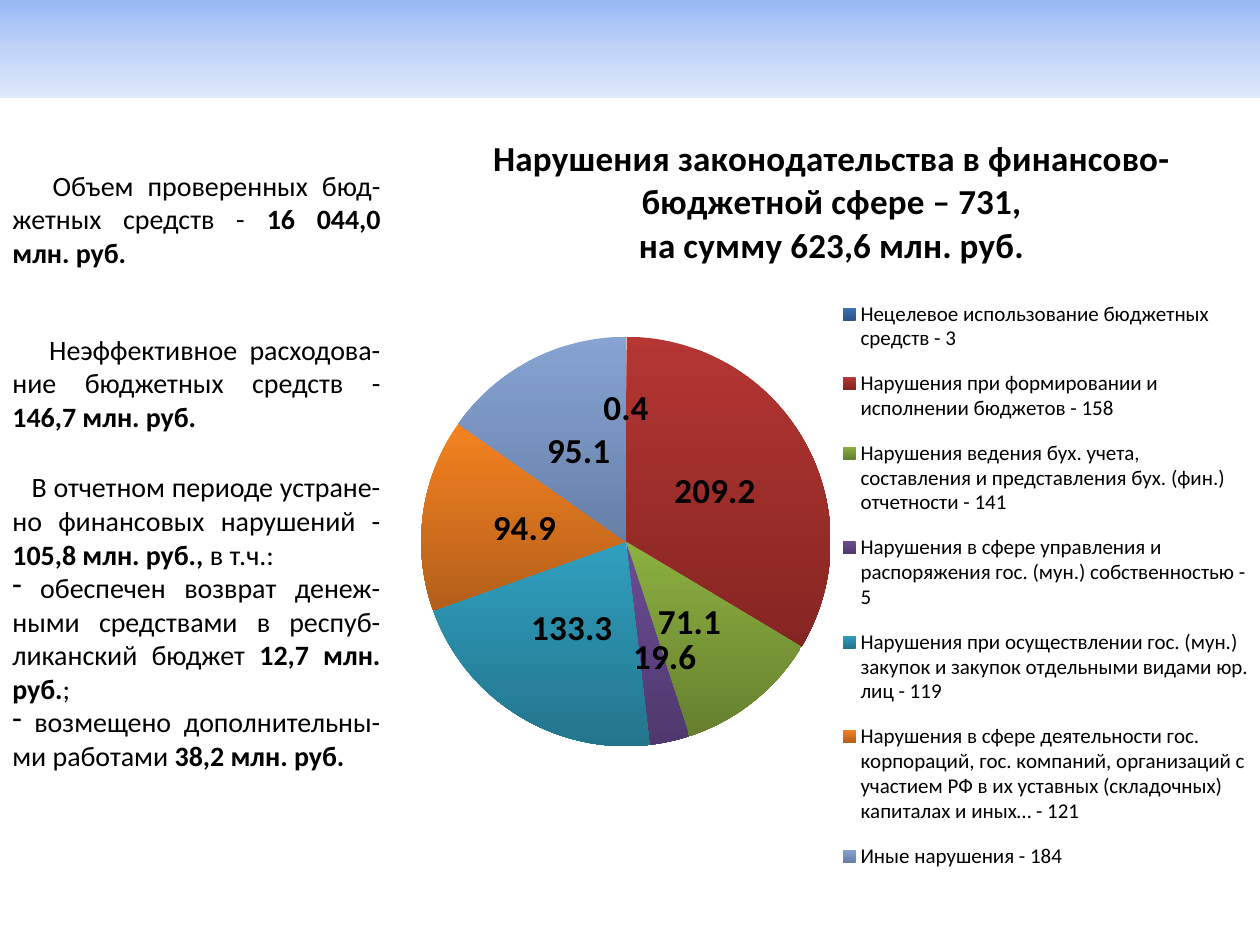
import copy

import lxml.etree
import pptx
import pptx.chart.data
import pptx.dml.color
import pptx.enum.chart
import pptx.enum.shapes
import pptx.enum.text
import pptx.oxml
import pptx.oxml.ns
import pptx.util

Pt = pptx.util.Pt
qn = pptx.oxml.ns.qn


def rgb(value):
    return pptx.dml.color.RGBColor.from_string(value)


def shade(fill, top, bottom):
    fill.gradient()
    fill.gradient_angle = 270
    for stop, color, position in zip(fill.gradient_stops, (top, bottom), (0, 1)):
        stop.color.rgb = rgb(color)
        stop.position = position


prs = pptx.Presentation()
prs.slide_width, prs.slide_height = Pt(720), Pt(540)
s = prs.slides.add_slide(prs.slide_layouts[6])

categories = [
    ("Нецелевое использование бюджетных средств - 3", 0.4, "3A73B8", "2A548A"),
    ("Нарушения при формировании и исполнении бюджетов - 158", 209.2, "B53633", "852522"),
    ("Нарушения ведения бух. учета, составления и представления бух. (фин.) отчетности - 141",
     71.1, "8CB040", "66802F"),
    ("Нарушения в сфере управления и распоряжения гос. (мун.) собственностью - 5",
     19.6, "6B4C94", "50386E"),
    ("Нарушения при осуществлении гос. (мун.) закупок и закупок отдельными видами юр. лиц - 119",
     133.3, "2F9FBF", "23758C"),
    ("Нарушения в сфере деятельности гос. корпораций, гос. компаний, организаций с участием РФ "
     "в их уставных (складочных) капиталах и иных… - 121", 94.9, "F58220", "B35F1A"),
    ("Иные нарушения - 184", 95.1, "87A3D3", "6680A8"),
]
data = pptx.chart.data.CategoryChartData(number_format="0.0")
data.categories = [c[0] for c in categories]
data.add_series("Series 1", [c[1] for c in categories])
chart = s.shapes.add_chart(
    pptx.enum.chart.XL_CHART_TYPE.PIE, Pt(230.4), Pt(62), Pt(489.6), Pt(450), data).chart
chart.font.name = "Calibri"
chart.font.size = Pt(16)
chart.font.color.rgb = rgb("000000")

tf = chart.chart_title.text_frame
tf.text = "Нарушения законодательства в финансово-бюджетной сфере – 731,\nна сумму 623,6 млн. руб."
for p in tf.paragraphs:
    p.font.name = "Calibri"
    p.font.size = Pt(20)
    p.font.bold = True
    p.font.color.rgb = rgb("000000")

chart.has_legend = True
chart.legend.position = pptx.enum.chart.XL_LEGEND_POSITION.RIGHT
chart.legend.include_in_layout = False
chart.legend.font.name = "Calibri"
chart.legend.font.size = Pt(12)
chart.legend.font.color.rgb = rgb("000000")

chart.plots[0].vary_by_categories = True
series = chart.plots[0].series[0]
for i, (name, value, top, bottom) in enumerate(categories):
    shade(series.points[i].format.fill, top, bottom)

labels = series.data_labels
labels.show_value = True
labels.number_format = "0.0"
labels.number_format_is_linked = False
labels.position = pptx.enum.chart.XL_LABEL_POSITION.CENTER
fonts = [labels.font]
for i in (0, 3):
    label = series.points[i].data_label
    label.position = pptx.enum.chart.XL_LABEL_POSITION.CENTER
    fonts.append(label.font)
for font in fonts:
    font.name = "Calibri"
    font.size = Pt(20)
    font.bold = True
    font.color.rgb = rgb("000000")

root = chart.element
moved = root.findall(".//" + qn("c:dLbl"))
layouts = [
    (root.find(".//" + qn("c:plotArea")), None, True, (0.02, 0.29, 0.48, 0.52)),
    (root.find(".//" + qn("c:legend")), "c:legendPos", True, (0.51, 0.22, 0.48, 0.77)),
    (moved[0], "c:idx", False, (0, -0.04)),
    (moved[1], "c:idx", False, (0.02, 0.02)),
]
for parent, before, edge, numbers in layouts:
    for old in parent.findall(qn("c:layout")):
        parent.remove(old)
    layout = lxml.etree.Element(qn("c:layout"))
    manual = lxml.etree.SubElement(layout, qn("c:manualLayout"))
    if before is None:
        lxml.etree.SubElement(manual, qn("c:layoutTarget"), val="inner")
        parent.insert(0, layout)
    else:
        parent.find(qn(before)).addnext(layout)
    if edge:
        for mode in ("c:xMode", "c:yMode"):
            lxml.etree.SubElement(manual, qn(mode), val="edge")
    for key, number in zip("xywh", numbers):
        lxml.etree.SubElement(manual, qn("c:" + key), val=str(number))

boxes = [
    (92.2, 65.5, [(23, [("Объем проверенных бюд-жетных средств - ", False),
                        ("16 044,0 млн. руб.", True)])]),
    (185.8, 65.5, [(21, [("Неэффективное расходова-ние бюджетных средств - ", False),
                         ("146,7 млн. руб.", True)])]),
    (264.2, 181.4, [
        (11, [("В отчетном периоде устране-но финансовых нарушений - ", False),
              ("105,8 млн. руб., ", True), ("в т.ч.:", False)]),
        (0, [(" обеспечен возврат денеж-ными средствами в респуб-ликанский бюджет", False),
             (" 12,7 млн. руб.", True), (";", False)]),
        (0, [(" возмещено дополнительны-ми работами ", False), ("38,2 млн. руб.", True)]),
    ]),
]
for top, height, paragraphs in boxes:
    tf = s.shapes.add_textbox(0, Pt(top), Pt(224.6), Pt(height)).text_frame
    tf.word_wrap = True
    tf.auto_size = pptx.enum.text.MSO_AUTO_SIZE.SHAPE_TO_FIT_TEXT
    tf.vertical_anchor = pptx.enum.text.MSO_ANCHOR.MIDDLE
    for i, (indent, runs) in enumerate(paragraphs):
        p = tf.add_paragraph() if i else tf.paragraphs[0]
        p.alignment = pptx.enum.text.PP_ALIGN.JUSTIFY
        p.font.name = "Calibri"
        p.font.size = Pt(16)
        p.font.color.rgb = rgb("000000")
        pPr = p._p.get_or_add_pPr()
        pPr.set("marL", "0")
        pPr.set("indent", str(Pt(indent)))
        if not indent:
            bullet = lxml.etree.Element(qn("a:buChar"), char="-")
            pPr.insert(0, bullet)
        for text, bold in runs:
            r = p.add_run()
            r.text = text
            r.font.bold = bold

sp = s.shapes.add_shape(pptx.enum.shapes.MSO_SHAPE.RECTANGLE, 0, 0, Pt(720), Pt(56))
sp.shadow.inherit = False
sp.line.fill.background()
shade(sp.fill, "98B9F6", "E0E9FB")
stops = sp._element.spPr.find(".//" + qn("a:gsLst"))
stops.insert(1, copy.deepcopy(stops[0]))
sp.fill.gradient_stops[1].position = 0.5
sp.fill.gradient_stops[1].color.rgb = rgb("C0D3F8")

prs.save("out.pptx")
